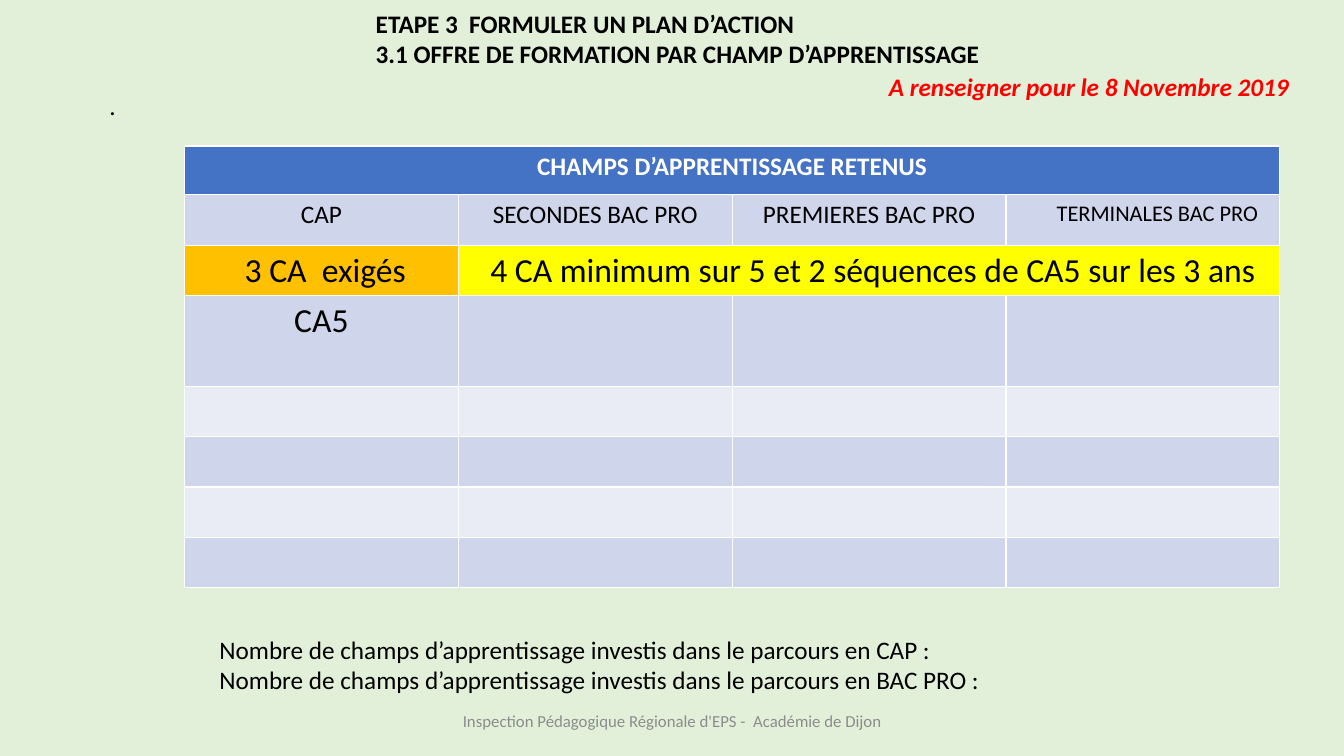
from pptx import Presentation
from pptx.dml.color import RGBColor
from pptx.enum.text import MSO_ANCHOR, PP_ALIGN
from pptx.util import Cm, Pt

BLACK, WHITE, RED, GREY = "000000", "FFFFFF", "FF0000", "8C8C8C"
BLUE, ORANGE, YELLOW = "4472C4", "FFC000", "FFFF00"
BANDS = ("E9EBF5", "CFD5EA")


def paint(color_format, value):
    color_format.rgb = RGBColor.from_string(value)


def fill_with(fill, value):
    fill.solid()
    paint(fill.fore_color, value)


def style(paragraph, size=18, color=BLACK, bold=False, italic=False, align=PP_ALIGN.LEFT):
    paragraph.alignment = align
    font = paragraph.font
    font.name, font.size, font.bold, font.italic = "Calibri", Pt(size), bold, italic
    paint(font.color, color)


def add_text(slide, left, top, width, height, lines, anchor=MSO_ANCHOR.TOP, **look):
    frame = slide.shapes.add_textbox(Cm(left), Cm(top), Cm(width), Cm(height)).text_frame
    frame.word_wrap = True
    frame.vertical_anchor = anchor
    for index, line in enumerate(lines):
        paragraph = frame.paragraphs[0] if index == 0 else frame.add_paragraph()
        paragraph.text = line
        style(paragraph, **look)
    return frame


def write_cell(cell, text, fill, **look):
    fill_with(cell.fill, fill)
    paragraph = cell.text_frame.paragraphs[0]
    paragraph.text = text
    style(paragraph, **{"align": PP_ALIGN.CENTER, **look})


def add_fields_table(slide):
    row_heights = [1.23, 1.27, 1.27, 2.28] + [1.27] * 4
    columns = 4
    column_width = 6.9
    fields = slide.shapes.add_table(
        len(row_heights), columns, Cm(4.65), Cm(3.68),
        Cm(column_width * columns), Cm(sum(row_heights))).table
    for column in fields.columns:
        column.width = Cm(column_width)
    for index, height in enumerate(row_heights):
        fields.rows[index].height = Cm(height)
        for cell in fields.rows[index].cells:
            write_cell(cell, "", BANDS[index % 2])

    # Heading across all columns
    fields.cell(0, 0).merge(fields.cell(0, 3))
    write_cell(fields.cell(0, 0), "CHAMPS D’APPRENTISSAGE RETENUS", BLUE, color=WHITE, bold=True)

    # Class levels
    for index, level in enumerate(("CAP", "SECONDES BAC PRO", "PREMIERES BAC PRO")):
        write_cell(fields.cell(1, index), level, BANDS[1])
    final_year = fields.cell(1, 3)
    write_cell(final_year, "TERMINALES BAC PRO", BANDS[1], size=16, align=PP_ALIGN.LEFT)
    final_year.margin_left = Cm(1.28)

    # Requirements
    fields.cell(2, 1).merge(fields.cell(2, 3))
    write_cell(fields.cell(2, 0), " 3 CA  exigés", ORANGE, size=24)
    write_cell(fields.cell(2, 1), " 4 CA minimum sur 5 et 2 séquences de CA5 sur les 3 ans",
               YELLOW, size=24)
    write_cell(fields.cell(3, 0), "CA5", BANDS[1], size=24)


def main():
    presentation = Presentation()
    presentation.slide_width, presentation.slide_height = Cm(33.87), Cm(19.05)
    slide = presentation.slides.add_slide(presentation.slide_layouts[6])
    fill_with(slide.background.fill, "E2F0D9")

    add_text(slide, 2.51, 2.16, 29.74, 1.02, ["."])
    add_fields_table(slide)

    # Title with its deadline
    title = add_text(slide, 9.22, 0.08, 25.2, 5.38, [
        "ETAPE 3  FORMULER UN PLAN D’ACTION",
        "3.1 OFFRE DE FORMATION PAR CHAMP D’APPRENTISSAGE"], bold=True)
    deadline = title.add_paragraph()
    deadline.text = "A renseigner pour le 8 Novembre 2019"
    style(deadline, color=RED, bold=True, italic=True)
    deadline.space_before = Pt(2)
    deadline_indent = Cm(12.93)
    deadline._p.get_or_add_pPr().set("marL", str(deadline_indent))

    # Totals and footer
    add_text(slide, 5.28, 15.85, 25.2, 1.8, [
        f"Nombre de champs d’apprentissage investis dans le parcours en {course} :"
        for course in ("CAP", "BAC PRO")])
    add_text(slide, 11.23, 17.65, 11.43, 1.02,
             ["Inspection Pédagogique Régionale d'EPS -  Académie de Dijon"],
             anchor=MSO_ANCHOR.MIDDLE, size=12, color=GREY, align=PP_ALIGN.CENTER)

    presentation.save("out.pptx")


if __name__ == "__main__":
    main()
